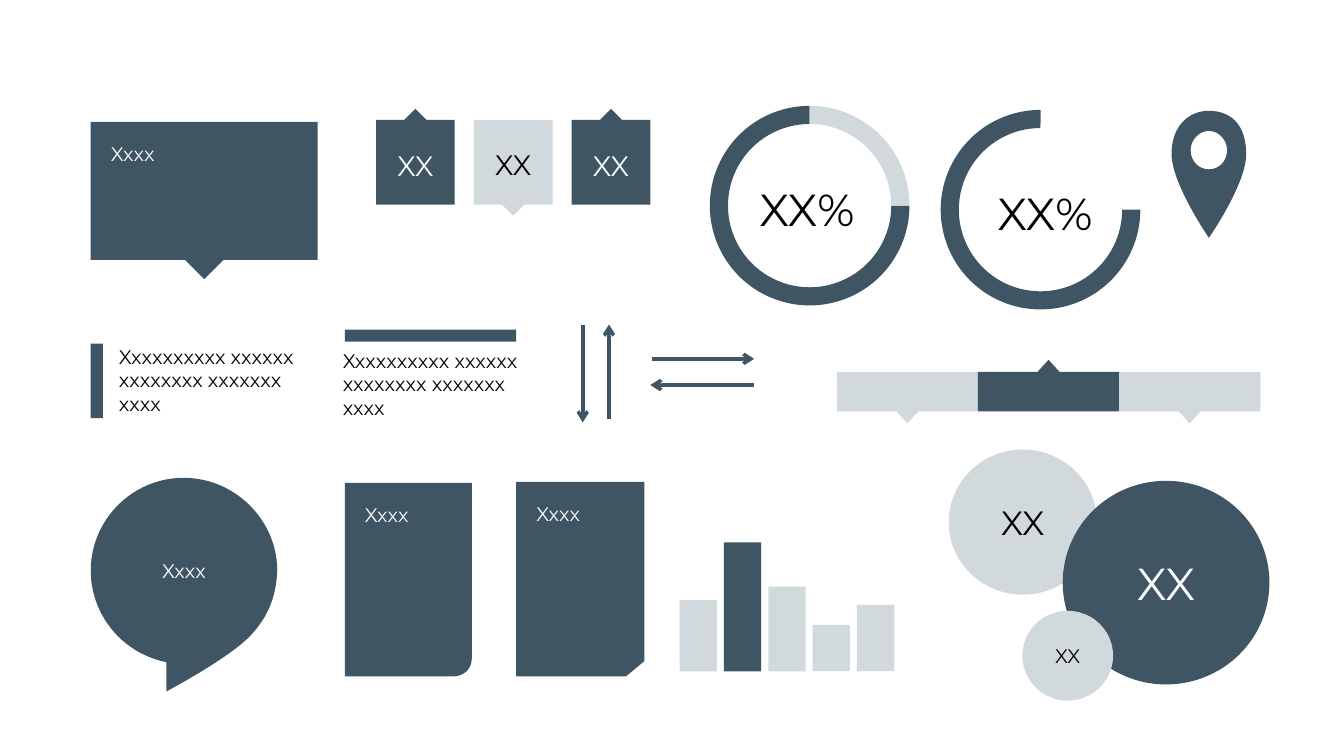
from lxml import etree
from pptx import Presentation
from pptx import util as u
from pptx.dml import color as dml
from pptx.enum import shapes as sh, text as tx
from pptx.oxml import ns

HUE = {"dark": "3F5564", "light": "D1D9DC", "white": "FFFFFF", "black": "000000"}
KIND = sh.MSO_SHAPE
LEFT, MID = tx.PP_ALIGN.LEFT, tx.PP_ALIGN.CENTER
LONG = "Xxxxxxxxxx xxxxxx xxxxxxxx xxxxxxx xxxx"


def rgb(name):
    """Return the palette colour of this name."""
    return dml.RGBColor.from_string(HUE[name])


def paint(shape, hue):
    """Give a shape a flat fill with no line or shadow."""
    shape.fill.solid()
    shape.fill.fore_color.rgb = rgb(hue)
    shape.line.fill.background()
    shape.shadow.inherit = False
    return shape


def write(shape, words, size=14, hue="white", align=MID, mid=True,
          pad=(0.12, 0.12, 0.12, 0.12), wrap=True):
    """Set the text of a shape; pad is left, top, right, bottom."""
    frame = shape.text_frame
    frame.word_wrap = wrap
    frame.vertical_anchor = tx.MSO_ANCHOR.MIDDLE if mid else tx.MSO_ANCHOR.TOP
    (frame.margin_left, frame.margin_top,
     frame.margin_right, frame.margin_bottom) = map(u.Inches, pad)
    para = frame.paragraphs[0]
    para.alignment = align
    run = para.add_run()
    run.text = words
    run.font.name, run.font.size = "Montserrat", u.Pt(size)
    run.font.color.rgb = rgb(hue)


def block(slide, kind, x, y, w, h, hue):
    """Add a painted preset shape."""
    return paint(slide.shapes.add_shape(kind, *map(u.Inches, (x, y, w, h))), hue)


def outline(slide, x, y, rings, hue):
    """Add a painted freeform from rings of points relative to x, y."""
    rings = [[(u.Inches(x + a), u.Inches(y + b)) for a, b in r] for r in rings]
    form = slide.shapes.build_freeform(*rings[0][0])
    form.add_line_segments(rings[0][1:])
    for ring in rings[1:]:
        form.move_to(*ring[0])
        form.add_line_segments(ring[1:])
    return paint(form.convert_to_shape(), hue)


def bend(start, *curves, steps=24):
    """Return points along a chain of cubic curves."""
    pts = [start]
    for c, d, end in curves:
        a = pts[-1]
        for n in range(1, steps + 1):
            t = n / steps
            s = 1 - t
            pts.append(tuple(s**3 * a[k] + 3 * s * s * t * c[k]
                             + 3 * s * t * t * d[k] + t**3 * end[k] for k in (0, 1)))
    return pts


def label(slide, x, y, w, h, words, **form):
    """Add a text box."""
    write(slide.shapes.add_textbox(*map(u.Inches, (x, y, w, h))), words, **form)


def notch(slide, x, y, w, h, hue, half=0.11, tip=0.11, up=False):
    """Add a box with a pointer at the middle of its top or bottom."""
    near, far, peak = (0, h, -tip) if up else (h, 0, h + tip)
    ring = [(0, far), (0, near), (w / 2 - half, near), (w / 2, peak),
            (w / 2 + half, near), (w, near), (w, far)]
    return outline(slide, x, y, [ring], hue)


def tabs(slide, x, y, w=0.78, h=0.84, step=0.97):
    """Place three number tabs with alternating pointers."""
    for i in range(3):
        up = i != 1
        tab = notch(slide, x + i * step, y, w, h, "dark" if up else "light", up=up)
        write(tab, "XX", size=20, hue="white" if up else "black",
              pad=(0.12, 0.28, 0.12, 0.12) if up else (0.12, 0.2, 0.12, 0.28))


def track(slide, x, y, w, h):
    """Place a strip of three steps with the middle one active."""
    for i in range(3):
        on = i == 1
        notch(slide, x + i * w / 3, y, w / 3, h, "dark" if on else "light",
              tip=0.12, up=on)


def ring(slide, x, y, size, shift, rest=False):
    """Place a three-quarter ring with its figure, and the rest if asked."""
    for hue, start, end in [("dark", 0, 270), ("light", 270, 0)][:1 + rest]:
        arc = block(slide, KIND.BLOCK_ARC, x, y, size, size, hue)
        arc.adjustments[0], arc.adjustments[1] = start * 0.6, end * 0.6
        arc.adjustments[2] = 0.18 / size
    label(slide, x + shift, y + 0.7, 1.35, 0.64, "XX%", size=32, hue="black",
          mid=False, pad=(0.1, 0.05, 0.1, 0.05), wrap=False)


def pin(slide, x, y):
    """Place a map pin with a hole."""
    drop = bend((0.74, 0.43), ((0.74, 0.13), (0.58, 0), (0.37, 0)),
                ((0.17, 0), (0, 0.15), (0, 0.43)),
                ((0, 0.72), (0.37, 1.26), (0.37, 1.26)),
                ((0.37, 1.26), (0.74, 0.73), (0.74, 0.43)))
    hole = bend((0.37, 0.2), ((0.47, 0.2), (0.55, 0.29), (0.55, 0.39)),
                ((0.55, 0.5), (0.47, 0.58), (0.37, 0.58)),
                ((0.27, 0.58), (0.19, 0.5), (0.19, 0.39)),
                ((0.19, 0.29), (0.27, 0.2), (0.37, 0.2)))
    outline(slide, x, y, [drop, hole], "dark")


def speech(slide, x, y):
    """Place a round speech bubble with a tail."""
    body = bend((1.58, 1.57), ((1.75, 1.39), (1.84, 1.19), (1.85, 0.92)),
                ((1.85, 0.42), (1.43, 0), (0.92, 0)),
                ((0.42, 0), (0, 0.41), (0, 0.92)),
                ((0, 1.33), (0.28, 1.73), (0.75, 1.83)))
    tail = bend((0.75, 2.12), ((0.75, 2.12), (1.37, 1.79), (1.58, 1.57)))
    write(outline(slide, x, y, [body + tail], "dark"), "Xxxx",
          pad=(0.12, 0.12, 0.12, 0.39))


def card(slide, x, y, w, h, corner):
    """Place a card whose lower right corner is the given points."""
    ends = [(w + a, h + b) for a, b in corner]
    shape = outline(slide, x, y, [[(0, h), (0, 0), (w, 0)] + ends], "dark")
    write(shape, "Xxxx", align=LEFT, mid=False, pad=(0.2,) * 4)


def quote(slide, x, y, bar, shift):
    """Place a text with an accent bar."""
    block(slide, KIND.RECTANGLE, x, y, *bar, "dark")
    label(slide, x + shift[0], y + shift[1], 2, 0.71, LONG, hue="black",
          align=LEFT, mid=False, pad=(0,) * 4)


def bars(slide, x, base, step=0.44, wide=0.37):
    """Place five bars standing on a base line."""
    for i, tall in enumerate((0.71, 1.28, 0.84, 0.46, 0.66)):
        block(slide, KIND.RECTANGLE, x + i * step, base - tall, wide, tall,
              "dark" if i == 1 else "light")


def discs(slide, x, y):
    """Place three overlapping discs."""
    for dx, dy, w, h, hue, ink, size in (
            (0, 0, 1.47, 1.44, "light", "black", 24),
            (1.13, 0.31, 2.05, 2.02, "dark", "white", 32),
            (0.73, 1.6, 0.9, 0.89, "light", "black", 14)):
        disc = block(slide, KIND.OVAL, x + dx, y + dy, w, h, hue)
        write(disc, "XX", size=size, hue=ink)


def arrows(slide, x, y):
    """Place an upright and a level pair of opposed arrows."""
    for ax, ay, bx, by in ((0, 0, 0, 0.97), (0.26, 0.94, 0.26, 0),
                           (0.69, 0.34, 1.7, 0.34), (1.7, 0.6, 0.67, 0.6)):
        ends = map(u.Inches, (x + ax, y + ay, x + bx, y + by))
        line = slide.shapes.add_connector(sh.MSO_CONNECTOR.STRAIGHT, *ends)
        line.line.color.rgb, line.line.width = rgb("dark"), u.Pt(2.5)
        etree.SubElement(line.line._get_or_add_ln(), ns.qn("a:tailEnd"), type="arrow")
        etree.SubElement(line._element.spPr, ns.qn("a:effectLst"))


def main():
    """Build and save the slide of infographic parts."""
    deck = Presentation()
    deck.slide_width, deck.slide_height = u.Inches(13.33), u.Inches(7.5)
    slide = deck.slides.add_slide(deck.slide_layouts[6])
    speech(slide, 0.9, 4.74)
    ring(slide, 9.33, 1.09, 1.98, 0.36)
    ring(slide, 7.04, 1.05, 1.98, 0.29, rest=True)
    call = notch(slide, 0.9, 1.21, 2.25, 1.37, "dark", half=0.19, tip=0.19)
    write(call, "Xxxx", align=LEFT, mid=False, pad=(0.2,) * 4)
    discs(slide, 9.41, 4.46)
    tabs(slide, 3.73, 1.19)
    card(slide, 3.42, 4.79, 1.26, 1.92,
         bend((0, -0.19), ((0, 0), (-0.18, 0), (-0.18, 0))))
    card(slide, 5.12, 4.78, 1.27, 1.93, [(0, -0.15), (-0.18, 0)])
    quote(slide, 0.9, 3.41, (0.12, 0.74), (0.28, 0.01))
    quote(slide, 3.42, 3.27, (1.7, 0.12), (-0.02, 0.19))
    pin(slide, 11.62, 1.1)
    bars(slide, 6.74, 6.66)
    track(slide, 8.3, 3.69, 4.2, 0.39)
    arrows(slide, 5.78, 3.22)
    deck.save("out.pptx")


if __name__ == "__main__":
    main()
